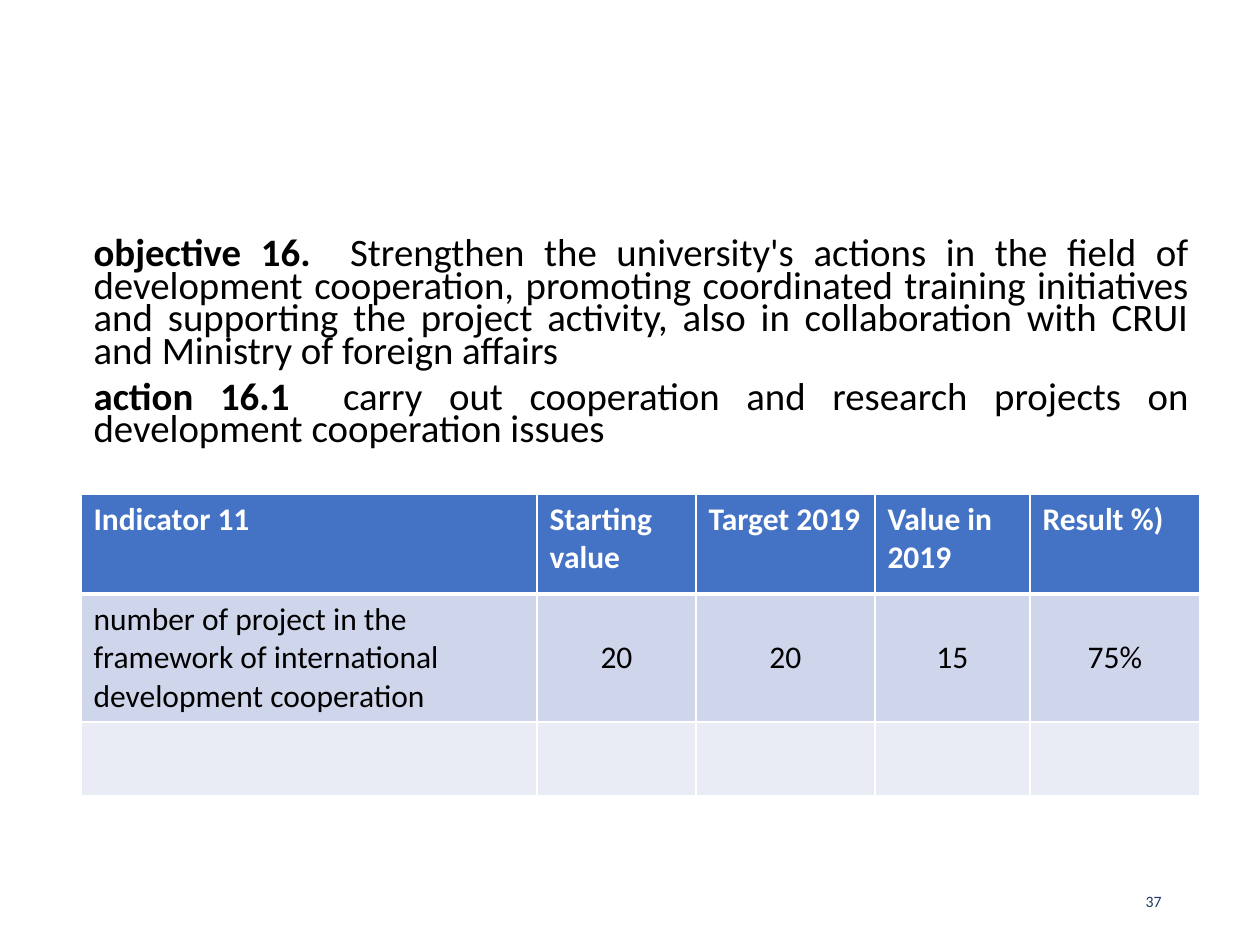
import pptx
import pptx.util
import pptx.dml.color
import pptx.enum.text
import pptx.oxml
import pptx.oxml.ns

ALIGN = pptx.enum.text.PP_ALIGN
ANCHOR = pptx.enum.text.MSO_ANCHOR

# Content
GOALS = [
    ("objective 16.", "  Strengthen the university's actions in the field of development "
     "cooperation, promoting coordinated training initiatives and supporting the project "
     "activity, also in collaboration with CRUI and Ministry of foreign affairs"),
    ("action 16.1  ", "carry out cooperation and research projects on development "
     "cooperation issues"),
]
ROWS = [
    ["Indicator 11", "Starting value", "Target 2019", "Value in 2019", "Result %)"],
    ["number of project in the framework of international development cooperation",
     "20", "20", "15", "75%"],
    ["", "", "", "", ""],
]
PAGE_NUMBER = "37"

# Layout in px, 126 to the inch
COLUMN_WIDTHS = [456, 159, 179, 155, 170]
ROW_HEIGHTS = [100, 128, 74]
ROW_FILLS = ["4472C4", "CFD5EA", "E9EBF5"]
LEFT = 81


def px(length):
    return round(length * 914400 / 126)


def color(code):
    return pptx.dml.color.RGBColor.from_string(code)


def place(shape, left, top, width, height):
    shape.left, shape.top = px(left), px(top)
    shape.width, shape.height = px(width), px(height)


def style(font, size, code, bold=None):
    font.name = "Calibri"
    font.size = pptx.util.Pt(size)
    font.color.rgb = color(code)
    font.bold = bold


def set_borders(cell, bottom, top):
    properties = cell._tc.get_or_add_tcPr()
    widths = {"lnL": 1, "lnR": 1, "lnT": top, "lnB": bottom}
    for index, (side, width) in enumerate(widths.items()):
        line = pptx.oxml.parse_xml(
            f'<a:{side} {pptx.oxml.ns.nsdecls("a")} w="{width * 12700}">'
            '<a:solidFill><a:srgbClr val="FFFFFF"/></a:solidFill>'
            f'</a:{side}>')
        properties.insert(index, line)


def add_goals(page):
    box = page.placeholders[1]
    place(box, LEFT, 234, 1121, 228)
    frame = box.text_frame
    frame.auto_size = pptx.enum.text.MSO_AUTO_SIZE.NONE
    frame.vertical_anchor = ANCHOR.TOP
    for index, (label, wording) in enumerate(GOALS):
        para = frame.add_paragraph() if index else frame.paragraphs[0]
        para.alignment = ALIGN.JUSTIFY
        para.line_spacing = 0.7
        para.space_before = pptx.util.Pt(7.5 if index else 0)
        style(para.font, 22.2, "000000")
        for text, bold in ((label, True), (wording, False)):
            span = para.add_run()
            span.text = text
            span.font.bold = bold


def add_indicators(page):
    table = page.shapes.add_table(
        len(ROWS), len(COLUMN_WIDTHS), px(LEFT), px(494),
        px(sum(COLUMN_WIDTHS)), px(sum(ROW_HEIGHTS))).table
    for column, width in zip(table.columns, COLUMN_WIDTHS):
        column.width = px(width)
    for r, texts in enumerate(ROWS):
        table.rows[r].height = px(ROW_HEIGHTS[r])
        header = r == 0
        for c, text in enumerate(texts):
            cell = table.cell(r, c)
            cell.text = text
            cell.fill.solid()
            cell.fill.fore_color.rgb = color(ROW_FILLS[r])
            cell.vertical_anchor = ANCHOR.TOP if header else ANCHOR.MIDDLE
            set_borders(cell, bottom=3 if header else 1, top=3 if r == 1 else 1)
            para = cell.text_frame.paragraphs[0]
            para.alignment = ALIGN.LEFT if header or c == 0 else ALIGN.CENTER
            style(para.font, 18, "FFFFFF" if header else "000000", header)


def add_page_number(page):
    box = page.shapes.add_textbox(px(890), px(876), px(284), px(50))
    frame = box.text_frame
    frame.word_wrap = True
    frame.vertical_anchor = ANCHOR.MIDDLE
    para = frame.paragraphs[0]
    para.text = PAGE_NUMBER
    para.alignment = ALIGN.RIGHT
    style(para.font, 9, "203864")


def main():
    deck = pptx.Presentation()
    deck.slide_width, deck.slide_height = px(1260), px(945)
    page = deck.slides.add_slide(deck.slide_layouts[0])
    # The slide has no title
    title = page.shapes.title.element
    title.getparent().remove(title)
    add_page_number(page)
    add_goals(page)
    add_indicators(page)
    deck.save("out.pptx")


if __name__ == "__main__":
    main()
